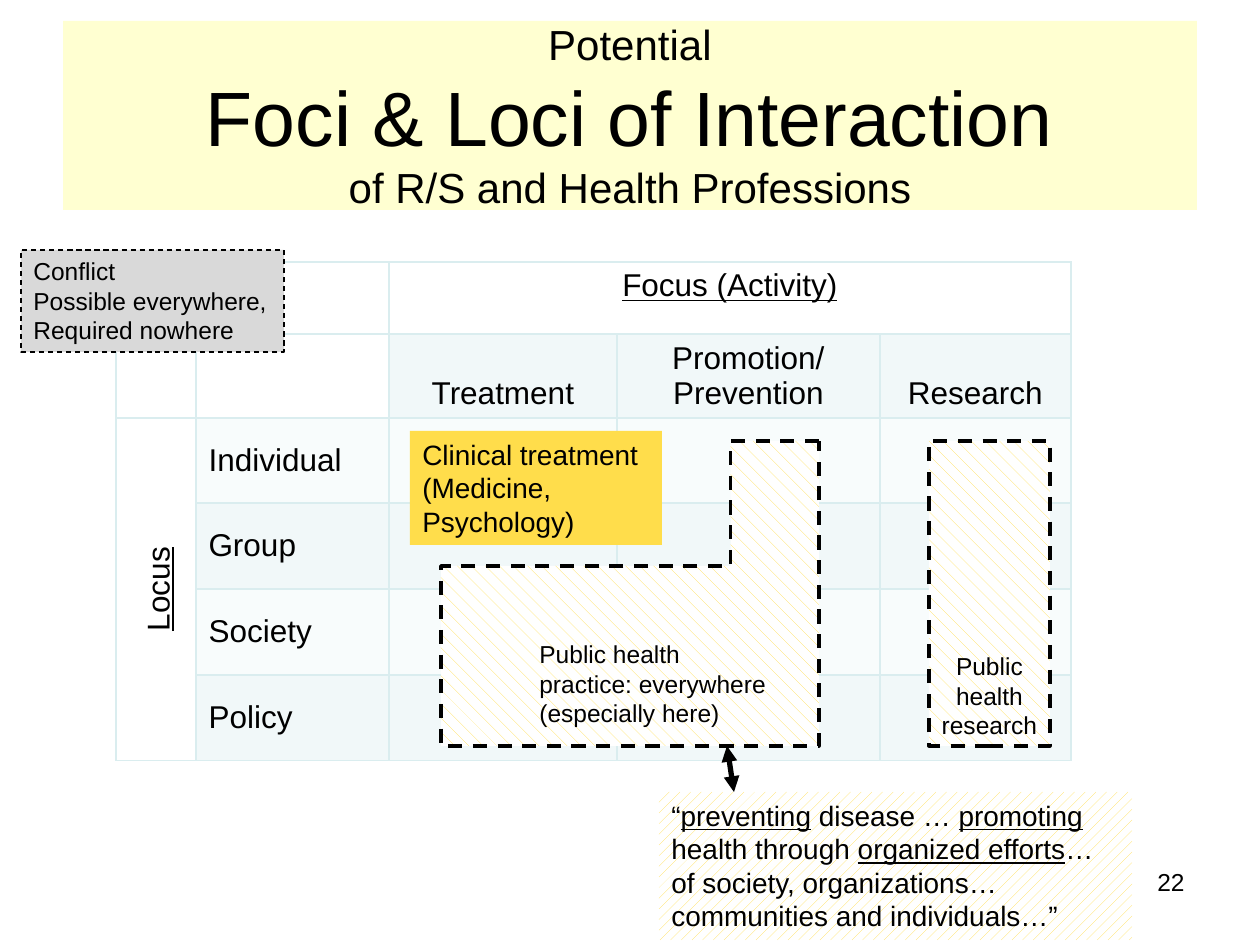
from lxml import etree
from pptx import Presentation
from pptx.dml.color import RGBColor
from pptx.enum.dml import MSO_LINE, MSO_PATTERN
from pptx.enum.shapes import MSO_CONNECTOR, MSO_SHAPE
from pptx.enum.text import MSO_ANCHOR, PP_ALIGN
from pptx.oxml.ns import qn
from pptx.util import Pt

PX = 914400 / 126
LEFT, CENTER, RIGHT = PP_ALIGN.LEFT, PP_ALIGN.CENTER, PP_ALIGN.RIGHT
TOP, MIDDLE, BOTTOM = MSO_ANCHOR.TOP, MSO_ANCHOR.MIDDLE, MSO_ANCHOR.BOTTOM
RECT, CORNER = MSO_SHAPE.RECTANGLE, MSO_SHAPE.CORNER
SHINGLE, PERCENT_20 = MSO_PATTERN.SHINGLE, MSO_PATTERN.PERCENT_20
DASH = MSO_LINE.DASH
COLORS = {
    "ink": "000000", "paper": "FFFFFF", "title": "FFFF99", "gold": "FFDD4B",
    "gray": "D9D9D9", "border": "DAEDEF", "band": "F1F8F9", "pale": "F8FCFC",
}
RGB = {name: RGBColor.from_string(value) for name, value in COLORS.items()}


def emu(*lengths):
    return [round(length * PX) for length in lengths]


def write(frame, text, size, align=LEFT, anchor=TOP):
    """Newlines part paragraphs, | breaks a line, underscores enclose underlined words."""
    frame.word_wrap = True
    frame.vertical_anchor = anchor
    for number, words in enumerate(text.split("\n")):
        paragraph = frame.add_paragraph() if number else frame.paragraphs[0]
        paragraph.alignment = align
        for line_number, line in enumerate(words.split("|")):
            if line_number:
                paragraph.add_line_break()
            for position, piece in enumerate(line.split("_")):
                if piece:
                    run = paragraph.add_run()
                    run.text = piece
                    font = {"name": "Arial", "size": Pt(size), "underline": position % 2 == 1}
                    for key, value in font.items():
                        setattr(run.font, key, value)
                    run.font.color.rgb = RGB["ink"]


prs = Presentation()
prs.slide_width, prs.slide_height = emu(1260, 945)
slide = prs.slides.add_slide(prs.slide_layouts[5])
shapes = slide.shapes

# Title on a translucent band
title = shapes.title
title.left, title.top, title.width, title.height = emu(63, 21, 1134, 189)
title.fill.solid()
title.fill.fore_color.rgb = RGB["title"]
band_color = title._element.spPr.find(qn("a:solidFill"))[0]
etree.SubElement(band_color, qn("a:alpha"), val="45000")
title.text_frame.word_wrap = True
title.text_frame.vertical_anchor = MIDDLE
heading = title.text_frame.paragraphs[0]
heading.alignment = CENTER
title_lines = [("Potential", 24), ("Foci & Loci of Interaction", 44),
               ("of R/S and Health Professions", 24)]
for number, (words, size) in enumerate(title_lines):
    run = heading.add_run()
    run.text = words
    run.font.name, run.font.size = "Arial", Pt(size)
    run.font.color.rgb = RGB["ink"]
    if number < len(title_lines) - 1:
        heading.add_line_break()
        etree.SubElement(heading._p[-1], qn("a:rPr"), sz=str(size * 100))

# Focus and locus grid
column_widths = [80, 193, 228, 263, 191]
row_heights = [72, 84, 85, 86, 86, 85]
grid = shapes.add_table(len(row_heights), len(column_widths),
                        *emu(116, 262, sum(column_widths), sum(row_heights))).table
grid.first_row = grid.horz_banding = False
for column, width in zip(grid.columns, emu(*column_widths)):
    column.width = width
for row, height in zip(grid.rows, emu(*row_heights)):
    row.height = height
for r in range(len(row_heights)):
    for c in range(len(column_widths)):
        cell = grid.cell(r, c)
        plain = r == 0 or c == 0 or (r == 1 and c == 1)
        cell.fill.solid()
        cell.fill.fore_color.rgb = RGB["paper" if plain else "band" if r % 2 else "pale"]
        for place, side in enumerate(("a:lnL", "a:lnR", "a:lnT", "a:lnB")):
            border = etree.Element(qn(side), w="12700")
            border_fill = etree.SubElement(border, qn("a:solidFill"))
            etree.SubElement(border_fill, qn("a:srgbClr"), val=COLORS["border"])
            cell._tc.get_or_add_tcPr().insert(place, border)

focus = grid.cell(0, 2)
focus.merge(grid.cell(0, 4))
write(focus.text_frame, "_Focus (Activity)_", 18, CENTER)
for c, activity in enumerate(["Treatment", "Promotion/|Prevention", "Research"], 2):
    write(grid.cell(1, c).text_frame, activity, 18, CENTER)
    grid.cell(1, c).vertical_anchor = BOTTOM
locus = grid.cell(2, 0)
locus.merge(grid.cell(5, 0))
write(locus.text_frame, "_Locus_", 18, CENTER)
locus._tc.get_or_add_tcPr().set("vert", "vert270")
level_cells = [grid.cell(r, 1) for r in range(2, 6)]
for cell, level in zip(level_cells, ["Individual", "Group", "Society", "Policy"]):
    write(cell.text_frame, level, 18)
for cell in [locus, *level_cells]:
    cell.margin_top, cell.margin_bottom = emu(25, 25)

# Areas and notes: kind, box, fill, pattern, dashed line width, text, size, align, anchor
areas = [
    (RECT, (410, 431, 252, 114), "gold", None, 0,
     "Clinical treatment (Medicine, Psychology)", 16, LEFT, TOP),
    (CORNER, (441, 441, 378, 305), "gold", SHINGLE, 2, "", 14, LEFT, TOP),
    (RECT, (659, 792, 473, 148), "gold", PERCENT_20, 0,
     "“_preventing_ disease … _promoting_ health through _organized efforts_"
     "… of society, organizations… communities and individuals…”", 16, LEFT, TOP),
    (RECT, (21, 250, 263, 102), "gray", None, 0.75,
     "Conflict\nPossible everywhere, Required nowhere", 14, LEFT, TOP),
    (RECT, (929, 441, 121, 305), "gold", SHINGLE, 2,
     "Public health research", 14, CENTER, BOTTOM),
]
for kind, box, color, pattern, line_width, text, size, align, anchor in areas:
    area = shapes.add_shape(kind, *emu(*box))
    area.shadow.inherit = False
    if pattern:
        area.fill.patterned()
        area.fill.pattern = pattern
        area.fill.back_color.rgb = RGB["paper"]
    else:
        area.fill.solid()
    area.fill.fore_color.rgb = RGB[color]
    if line_width:
        area.line.color.rgb = RGB["ink"]
        area.line.width = Pt(line_width)
        area.line.dash_style = DASH
    else:
        area.line.fill.background()
    if kind == CORNER:
        area.adjustments[0], area.adjustments[1] = 0.59, 0.29
        area._element.spPr.find(qn("a:xfrm")).set("flipH", "1")
    if text:
        write(area.text_frame, text, size, align, anchor)

# Practice label and page number
labels = [
    ((527, 633, 252, 102), "Public health practice: everywhere (especially here)", LEFT),
    ((903, 861, 294, 66), "22", RIGHT),
]
for box, text, align in labels:
    write(shapes.add_textbox(*emu(*box)).text_frame, text, 14, align)

# Two-headed arrow from the practice area to its definition
arrow = shapes.add_connector(MSO_CONNECTOR.STRAIGHT, *emu(727, 746, 734, 792))
arrow.line.color.rgb = RGB["ink"]
arrow.line.width = Pt(3)
arrow_line = arrow._element.spPr.find(qn("a:ln"))
for end in ("a:headEnd", "a:tailEnd"):
    etree.SubElement(arrow_line, qn(end), type="triangle")
etree.SubElement(arrow._element.spPr, qn("a:effectLst"))

prs.save("out.pptx")
